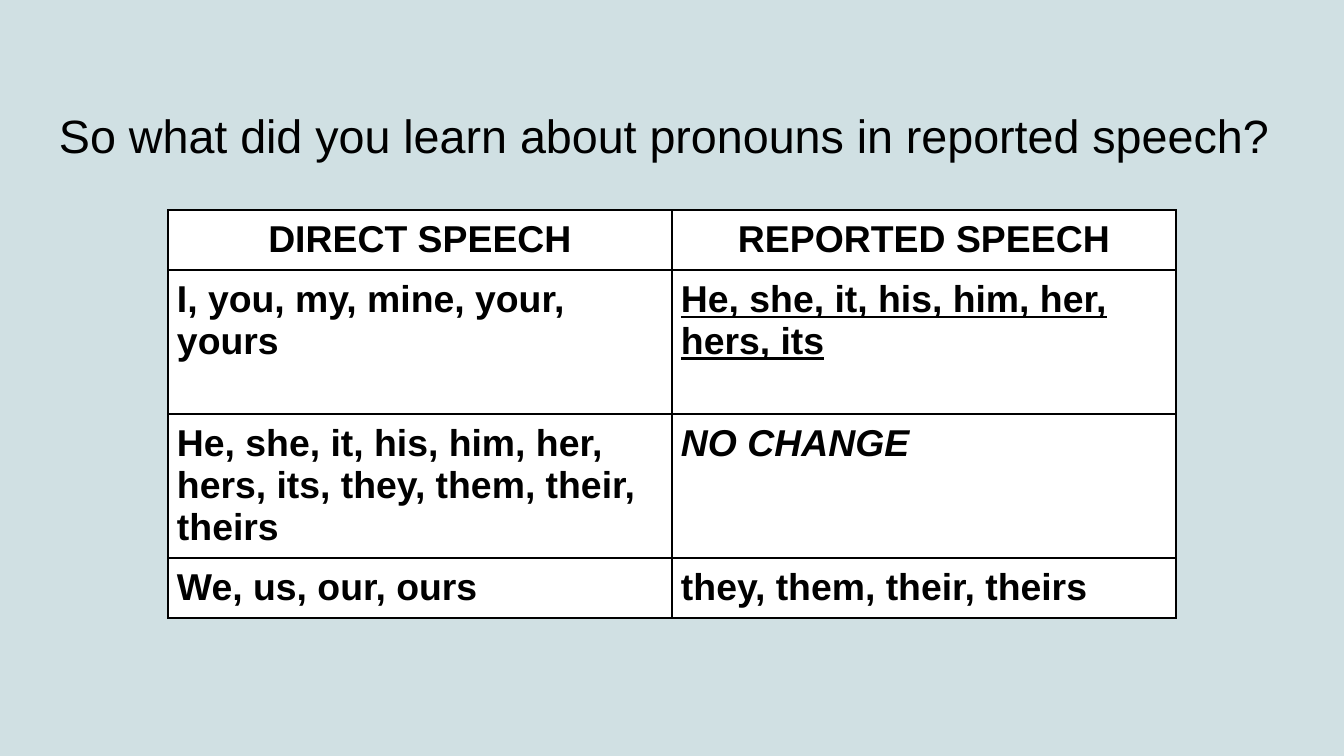
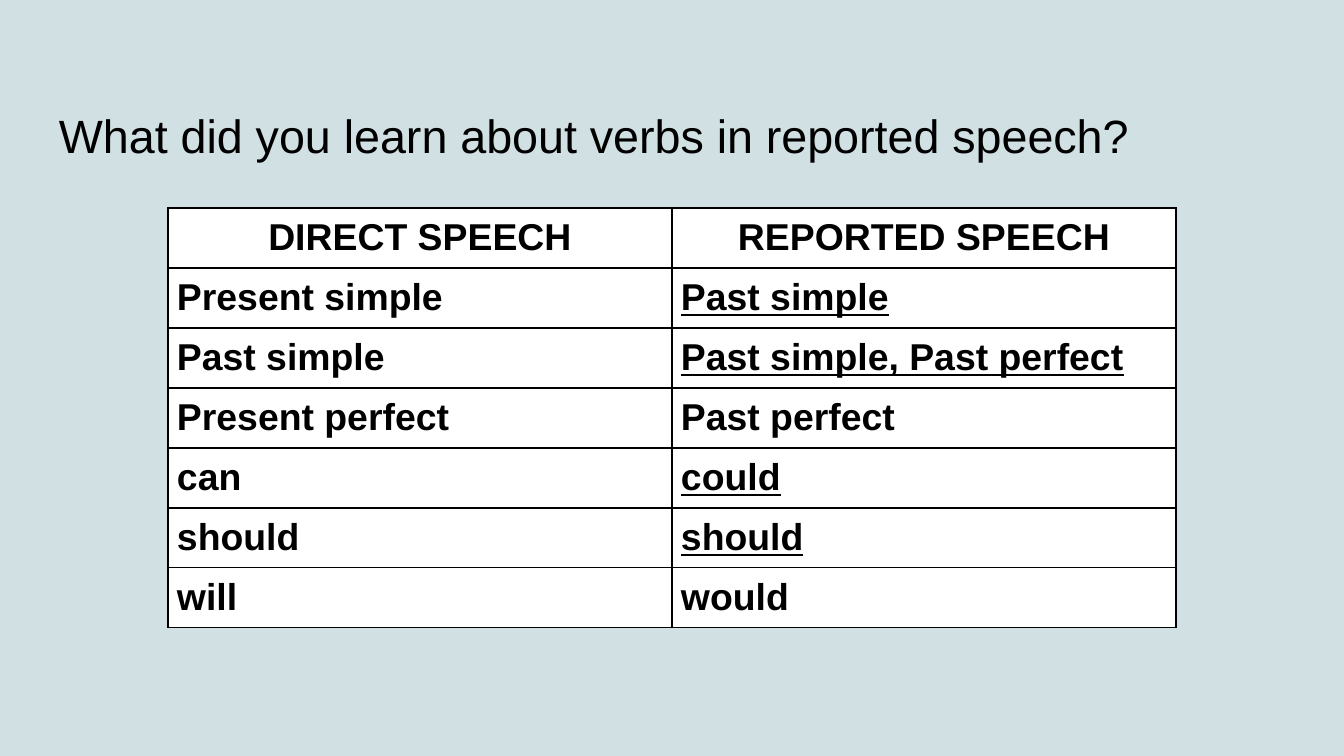
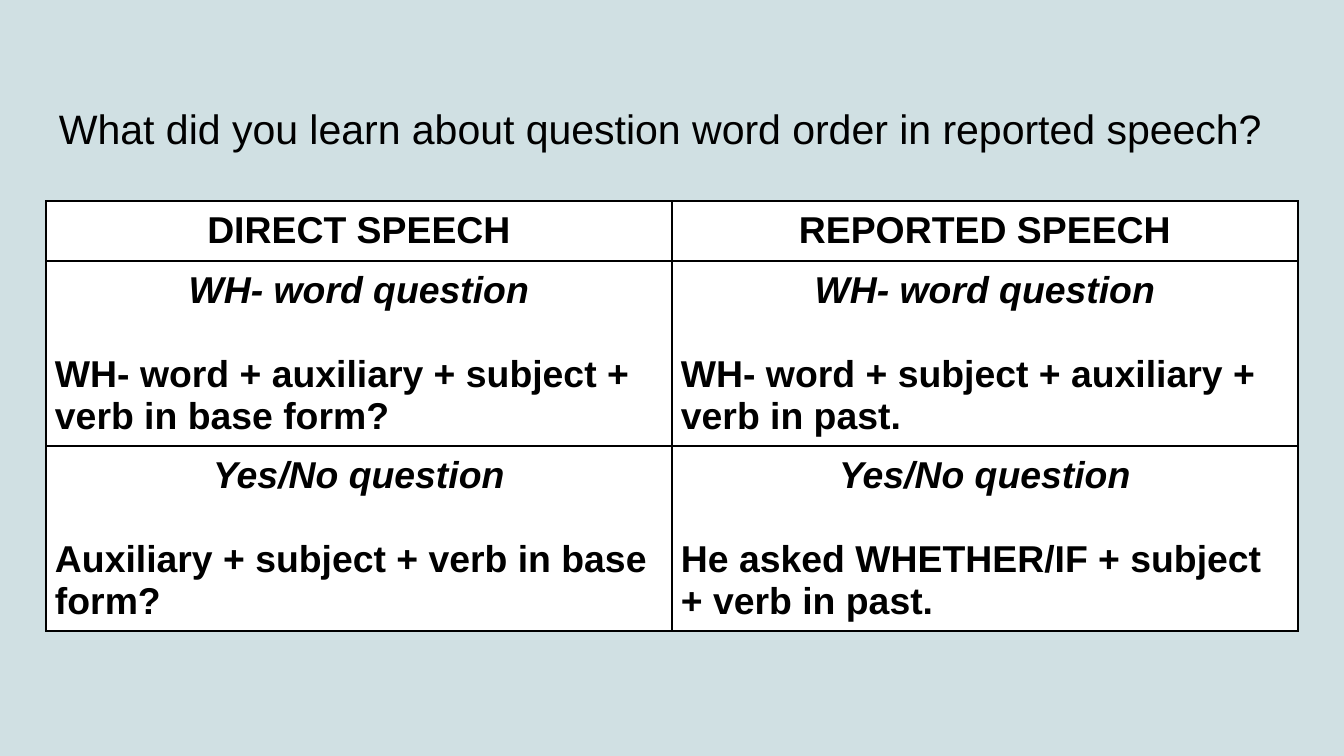
from lxml import etree
from pptx import Presentation, util as u
from pptx.dml.color import RGBColor
from pptx.enum import text
from pptx.oxml.ns import qn

PX = 914400 / 134.4
BACKGROUND, PAPER, INK = "D0E0E3", "FFFFFF", "000000"
FONT = "Arial"
HEADINGS = ("DIRECT SPEECH", "REPORTED SPEECH")


def px(length):
    return u.Emu(round(length * PX))


def rgb(code):
    return RGBColor.from_string(code)


lessons = [
    {
        "question": "So what did you learn about pronouns in reported speech?",
        "size": 25, "left": 168, "top": 210, "column": 504,
        "heights": [60, 144, 144, 60],
        "rows": [
            ("I, you, my, mine, your, yours", "He, she, it, his, him, her, hers, its"),
            ("He, she, it, his, him, her, hers, its, they, them, their, theirs", "NO CHANGE"),
            ("We, us, our, ours", "they, them, their, theirs"),
        ],
        "underlined": {1}, "italic": {"NO CHANGE"},
    },
    {
        "question": "What did you learn about verbs in reported speech?",
        "size": 25, "left": 168, "top": 208, "column": 504,
        "heights": [60] * 7,
        "rows": [
            ("Present simple", "Past simple"),
            ("Past simple", "Past simple, Past perfect"),
            ("Present perfect", "Past perfect"),
            ("can", "could"),
            ("should", "should"),
            ("will", "would"),
        ],
        "underlined": {1, 2, 4, 5}, "italic": set(),
    },
    {
        "question": "What did you learn about question word order in reported speech?",
        "size": 22, "left": 46, "top": 201, "column": 626,
        "heights": [60, 185, 185],
        "rows": [
            ("WH- word question\nWH- word + auxiliary + subject + verb in base form?",
             "WH- word question\nWH- word + subject + auxiliary + verb in past."),
            ("Yes/No question\nAuxiliary + subject + verb in base form?",
             "Yes/No question\nHe asked WHETHER/IF + subject + verb in past."),
        ],
        "underlined": set(), "italic": {"WH- word question", "Yes/No question"},
    },
]

deck = Presentation()
deck.slide_width, deck.slide_height = px(1344), px(756)

for lesson in lessons:
    slide = deck.slides.add_slide(deck.slide_layouts[5])
    slide.background.fill.solid()
    slide.background.fill.fore_color.rgb = rgb(BACKGROUND)

    question = slide.shapes.title
    question.left, question.top, question.width, question.height = map(px, (46, 66, 1252, 85))
    frame = question.text_frame
    frame.word_wrap = True
    frame.auto_size = text.MSO_AUTO_SIZE.NONE
    frame.vertical_anchor = text.MSO_ANCHOR.TOP
    frame.margin_left = frame.margin_right = frame.margin_top = frame.margin_bottom = px(13)
    line = frame.paragraphs[0]
    line.alignment = text.PP_ALIGN.LEFT
    line.line_spacing = 1.5
    run = line.add_run()
    run.text = lesson["question"]
    run.font.name, run.font.size = FONT, u.Pt(lesson["size"])
    run.font.color.rgb = rgb(INK)

    rows = [HEADINGS] + lesson["rows"]
    comparison = slide.shapes.add_table(
        len(rows), 2, px(lesson["left"]), px(lesson["top"]),
        px(2 * lesson["column"]), px(sum(lesson["heights"]))).table
    comparison.first_row = comparison.horz_banding = False
    for column in comparison.columns:
        column.width = px(lesson["column"])

    for r, wordings in enumerate(rows):
        comparison.rows[r].height = px(lesson["heights"][r])
        for c, wording in enumerate(wordings):
            cell = comparison.cell(r, c)
            cell.margin_left = cell.margin_right = cell.margin_top = cell.margin_bottom = px(9)
            parts = wording.split("\n")
            for i, part in enumerate(parts):
                paragraph = cell.text_frame.paragraphs[0] if i == 0 else cell.text_frame.add_paragraph()
                centred = r == 0 or (len(parts) > 1 and i == 0)
                paragraph.alignment = text.PP_ALIGN.CENTER if centred else text.PP_ALIGN.LEFT
                if i > 0:
                    paragraph.space_before = u.Pt(22.5)
                run = paragraph.add_run()
                run.text = part
                run.font.name, run.font.size, run.font.bold = FONT, u.Pt(20), True
                run.font.color.rgb = rgb(INK)
                run.font.italic = part in lesson["italic"]
                run.font.underline = c == 1 and r in lesson["underlined"]

            properties = cell._tc.get_or_add_tcPr()
            for side in ("a:lnL", "a:lnR", "a:lnT", "a:lnB"):
                border = etree.SubElement(properties, qn(side), w=str(u.Pt(1)))
                paint = etree.SubElement(border, qn("a:solidFill"))
                etree.SubElement(paint, qn("a:srgbClr"), val=INK)
            cell.fill.solid()
            cell.fill.fore_color.rgb = rgb(PAPER)

deck.save("out.pptx")
